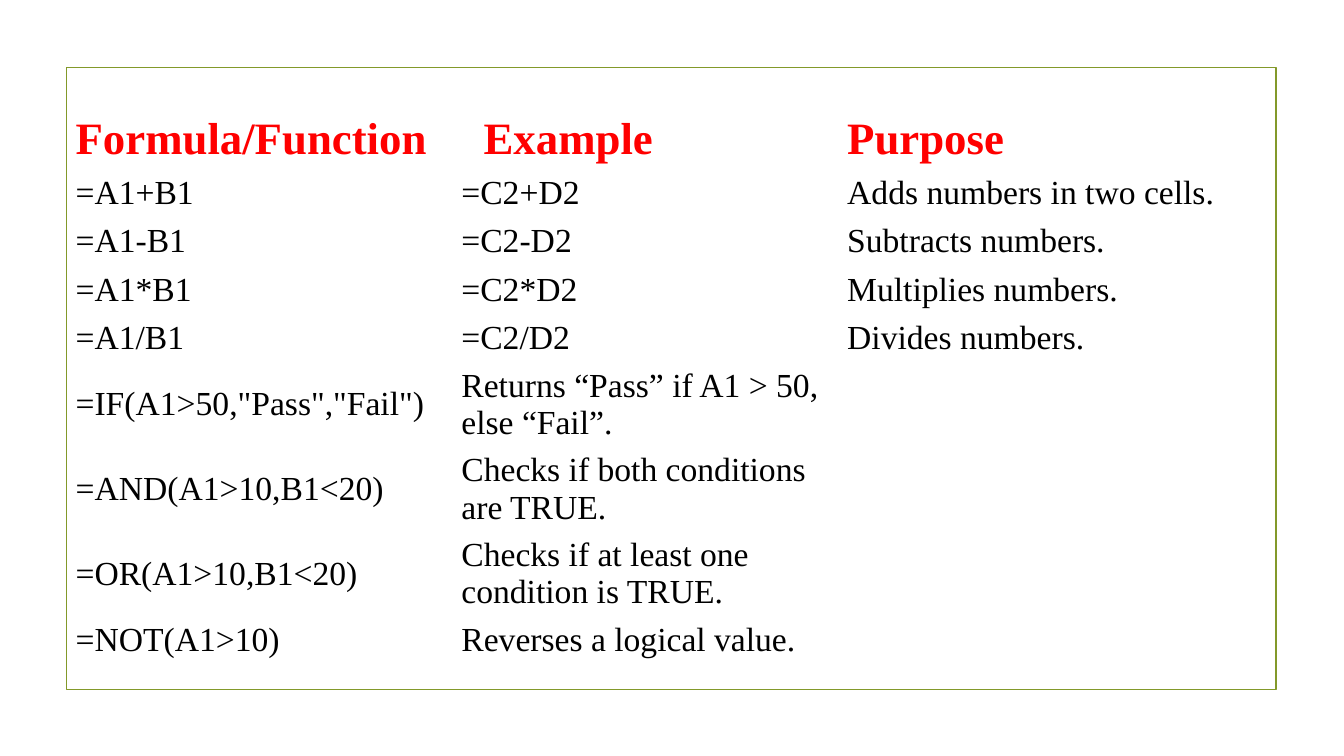
from dataclasses import dataclass

from pptx import Presentation
from pptx import util as u
from pptx.dml import color
from pptx.enum import shapes, text


@dataclass(frozen=True)
class Theme:
    font: str = "Times New Roman"
    head: color.RGBColor = color.RGBColor(0xFF, 0, 0)
    body: color.RGBColor = color.RGBColor(0, 0, 0)
    edge: color.RGBColor = color.RGBColor(0x83, 0x99, 0x2A)
    head_size: int = 32
    body_size: int = 24


THEME = Theme()
NO_GRID = "{2D5ABB26-0587-4C30-8999-92F81FD0307C}"
HEAD_ROW, ONE_LINE, TWO_LINE = 0.57, 0.48, 0.84
PAD_X, PAD_Y, INDENT = 0.08, 0.04, 0.22

# Row height, then the cell texts
ROWS = [
    (HEAD_ROW, "Formula/Function", "Example", "Purpose"),
    (ONE_LINE, "=A1+B1", "=C2+D2", "Adds numbers in two cells."),
    (ONE_LINE, "=A1-B1", "=C2-D2", "Subtracts numbers."),
    (ONE_LINE, "=A1*B1", "=C2*D2", "Multiplies numbers."),
    (ONE_LINE, "=A1/B1", "=C2/D2", "Divides numbers."),
    (TWO_LINE, '=IF(A1>50,"Pass","Fail")', "Returns “Pass” if A1 > 50, else “Fail”."),
    (TWO_LINE, "=AND(A1>10,B1<20)", "Checks if both conditions are TRUE."),
    (TWO_LINE, "=OR(A1>10,B1<20)", "Checks if at least one condition is TRUE."),
    (ONE_LINE, "=NOT(A1>10)", "Reverses a logical value."),
]


def add_frame(slide, left, top, width, height):
    box = map(u.Inches, (left, top, width, height))
    frame = slide.shapes.add_shape(shapes.MSO_SHAPE.RECTANGLE, *box)
    frame.shadow.inherit = False
    frame.fill.background()
    frame.line.color.rgb = THEME.edge
    frame.line.width = u.Pt(1.25)


def set_cell(cell, words, is_head):
    para = cell.text_frame.paragraphs[0]
    para.text = words
    for run in para.runs:
        run.font.name = THEME.font
        run.font.bold = is_head
        run.font.size = u.Pt(THEME.head_size if is_head else THEME.body_size)
        run.font.color.rgb = THEME.head if is_head else THEME.body


def add_grid(slide, left, top, width):
    height = sum(row[0] for row in ROWS)
    box = map(u.Inches, (left, top, width, height))
    table = slide.shapes.add_table(len(ROWS), 3, *box).table

    # Plain style without bands or borders
    table.first_row = table.horz_banding = False
    table._tbl.tblPr.find("{*}tableStyleId").text = NO_GRID

    for cell in table.iter_cells():
        cell.fill.background()
        cell.vertical_anchor = text.MSO_ANCHOR.MIDDLE
        cell.margin_left = cell.margin_right = u.Inches(PAD_X)
        cell.margin_top = cell.margin_bottom = u.Inches(PAD_Y)

    for col in table.columns:
        col.width = u.Inches(width / 3)
    for r, (tall, *words) in enumerate(ROWS):
        table.rows[r].height = u.Inches(tall)
        for c, word in enumerate(words):
            set_cell(table.cell(r, c), word, r == 0)

    # The middle heading is set in a little
    table.cell(0, 1).margin_left = u.Inches(PAD_X + INDENT)


def main():
    deck = Presentation()
    deck.slide_width, deck.slide_height = u.Inches(13.33), u.Inches(7.5)
    slide = deck.slides.add_slide(deck.slide_layouts[6])
    add_frame(slide, 0.66, 0.67, 12, 6.17)
    add_grid(slide, 0.67, 1.1, 11.48)
    deck.save("out.pptx")


if __name__ == "__main__":
    main()
